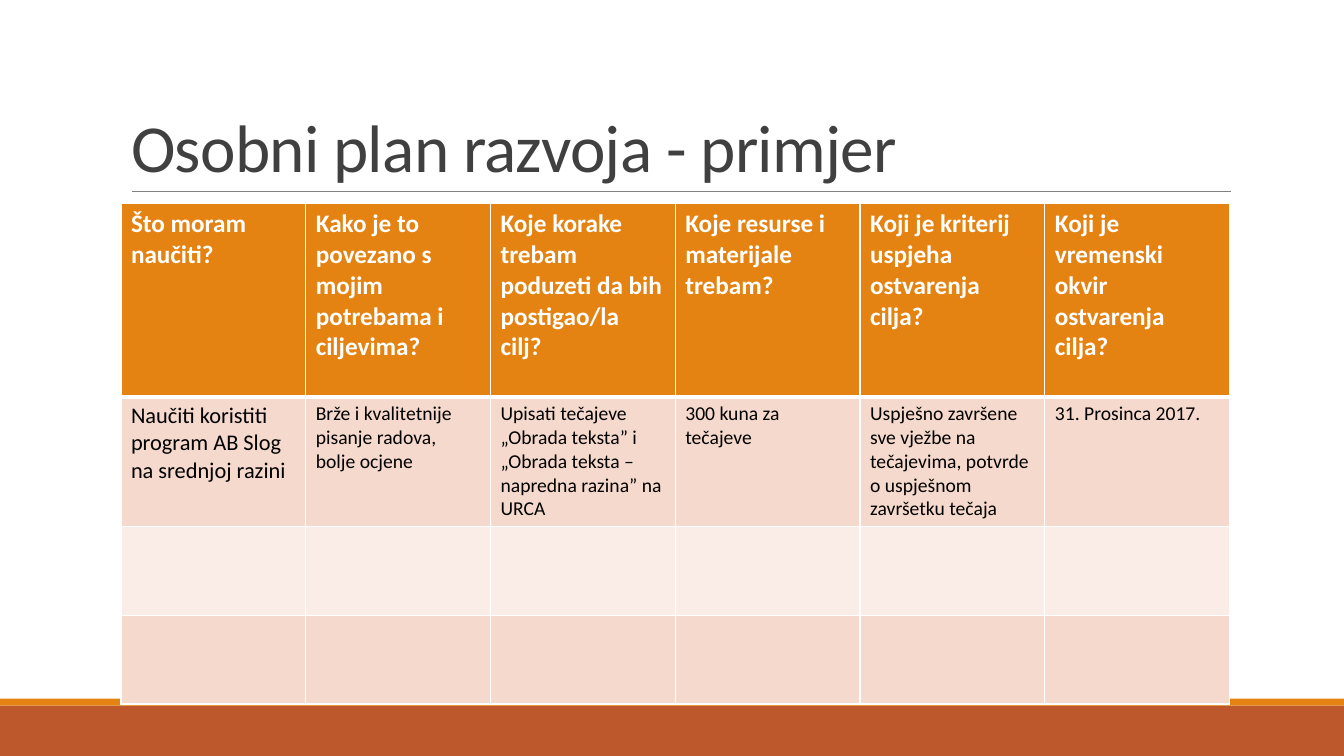
import lxml.etree
import pptx
import pptx.dml.color
import pptx.enum.shapes
import pptx.enum.text
import pptx.oxml.ns
import pptx.util

Pt = pptx.util.Pt
qn = pptx.oxml.ns.qn

WIDTH, HEIGHT = 960, 540
WHITE, BLACK, GRAY, DARK = "FFFFFF", "000000", "808080", "404040"
ORANGE, RUST, PEACH, PALE = "E48312", "BD582C", "F5D9CC", "FAEDE7"

HEADERS = [
    "Što moram naučiti?",
    "Kako je to povezano s mojim potrebama i ciljevima?",
    "Koje korake trebam poduzeti da bih postigao/la cilj?",
    "Koje resurse i materijale trebam?",
    "Koji je kriterij uspjeha ostvarenja cilja?",
    "Koji je vremenski okvir ostvarenja cilja?",
]
EXAMPLE = [
    "Naučiti koristiti program AB Slog na srednjoj razini",
    "Brže i kvalitetnije pisanje radova, bolje ocjene",
    "Upisati tečajeve „Obrada teksta” i „Obrada teksta – napredna razina” na URCA",
    "300 kuna za tečajeve",
    "Uspješno završene sve vježbe na tečajevima, potvrde o uspješnom završetku tečaja",
    "31. Prosinca 2017.",
]
BLANK = [""] * len(HEADERS)

# texts, height, fill, text colour, bold, size of first cell, size of the others
PLAN_ROWS = [
    (HEADERS, 138, ORANGE, WHITE, True, 18, 18),
    (EXAMPLE, 92, PEACH, BLACK, False, 16, 14),
    (BLANK, 63.5, PALE, BLACK, False, 14, 14),
    (BLANK, 63.5, PEACH, BLACK, False, 14, 14),
]


def color(hex_value):
    return pptx.dml.color.RGBColor.from_string(hex_value)


class SlideBuilder:
    font_name = "Calibri"

    def __init__(self, slide):
        self.slide = slide

    def add_text(self, text_frame, text, hex_color, **formats):
        """Put one formatted run into the frame and return it."""
        run = text_frame.paragraphs[0].add_run()
        run.text = text
        for name, value in {"name": self.font_name, **formats}.items():
            setattr(run.font, name, value)
        run.font.color.rgb = color(hex_color)
        return run

    def bar(self, top, height, fill):
        shape = self.slide.shapes.add_shape(
            pptx.enum.shapes.MSO_SHAPE.RECTANGLE, 0, Pt(top), Pt(WIDTH), Pt(height))
        shape.shadow.inherit = False
        shape.fill.solid()
        shape.fill.fore_color.rgb = color(fill)
        shape.line.fill.background()

    def rule(self, left, right, top, hex_color, width):
        connector = self.slide.shapes.add_connector(
            pptx.enum.shapes.MSO_CONNECTOR.STRAIGHT, Pt(left), Pt(top), Pt(right), Pt(top))
        connector.line.color.rgb = color(hex_color)
        connector.line.width = Pt(width)
        lxml.etree.SubElement(connector._element.spPr, qn("a:effectLst"))

    def title(self, text, left, top, width, height):
        title = self.slide.shapes.title
        box = {"left": left, "top": top, "width": width, "height": height}
        for name, value in box.items():
            setattr(title, name, Pt(value))
        formats = {
            "word_wrap": True,
            "auto_size": pptx.enum.text.MSO_AUTO_SIZE.NONE,
            "vertical_anchor": pptx.enum.text.MSO_ANCHOR.BOTTOM,
        }
        for name, value in formats.items():
            setattr(title.text_frame, name, value)
        paragraph = title.text_frame.paragraphs[0]
        paragraph.alignment = pptx.enum.text.PP_ALIGN.LEFT
        paragraph.line_spacing = 0.85
        run = self.add_text(title.text_frame, text, DARK, size=Pt(48))
        run._r.get_or_add_rPr().set("spc", "-50")

    def borders(self, cell, bottom_width):
        properties = cell._tc.get_or_add_tcPr()
        for side, width in {"L": 1, "R": 1, "T": 1, "B": bottom_width}.items():
            line = lxml.etree.SubElement(properties, qn(f"a:ln{side}"), w=str(Pt(width)))
            fill = lxml.etree.SubElement(line, qn("a:solidFill"))
            lxml.etree.SubElement(fill, qn("a:srgbClr"), val=WHITE)

    def table(self, rows, left, top, width):
        column_count = len(rows[0][0])
        total_height = sum(row[1] for row in rows)
        table = self.slide.shapes.add_table(
            len(rows), column_count, Pt(left), Pt(top), Pt(width), Pt(total_height)).table
        for column in table.columns:
            column.width = Pt(width / column_count)
        for row_index, (texts, height, fill, ink, bold, first_size, size) in enumerate(rows):
            table.rows[row_index].height = Pt(height)
            for column_index, text in enumerate(texts):
                cell = table.cell(row_index, column_index)
                self.borders(cell, 3 if row_index == 0 else 1)
                cell.fill.solid()
                cell.fill.fore_color.rgb = color(fill)
                if text:
                    text_size = first_size if column_index == 0 else size
                    self.add_text(cell.text_frame, text, ink, size=Pt(text_size), bold=bold)


def main():
    presentation = pptx.Presentation()
    presentation.slide_width, presentation.slide_height = Pt(WIDTH), Pt(HEIGHT)
    slide = presentation.slides.add_slide(presentation.slide_layouts.get_by_name("Title Only"))
    builder = SlideBuilder(slide)
    builder.bar(504, 36, RUST)
    builder.bar(499, 5, ORANGE)
    builder.rule(94, 879, 136.8, GRAY, 0.5)
    builder.title("Osobni plan razvoja - primjer", 86.4, 22.5, 792, 114.2)
    builder.table(PLAN_ROWS, 86.4, 145.5, 792)
    presentation.save("out.pptx")


if __name__ == "__main__":
    main()
